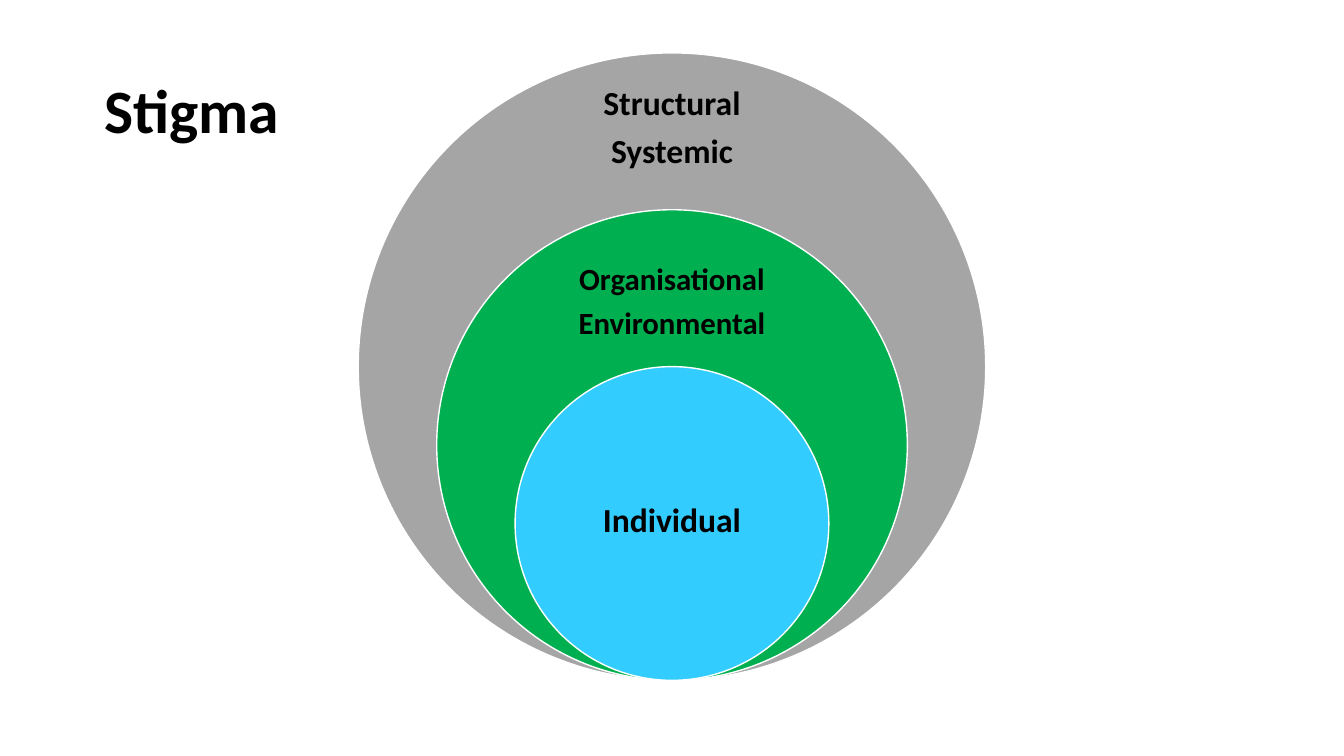
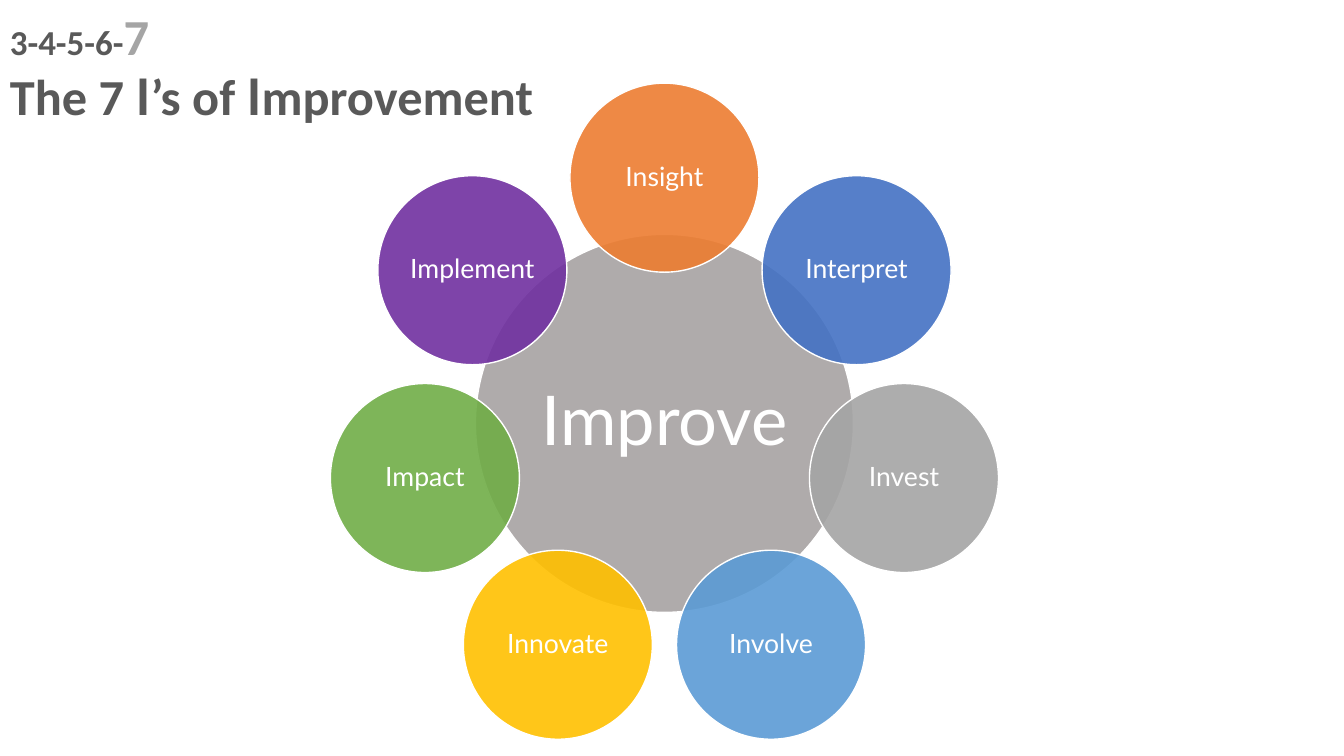
import math

import pptx
import pptx.dml.color
import pptx.enum.shapes
import pptx.enum.text
import pptx.oxml.ns
import pptx.util
from lxml import etree

BLACK, WHITE, DARK_GREY, GREY = "000000", "FFFFFF", "595959", "A5A5A5"
MIDDLE = pptx.enum.text.MSO_ANCHOR.MIDDLE
CENTER = pptx.enum.text.PP_ALIGN.CENTER

presentation = pptx.Presentation()
presentation.slide_width = pptx.util.Inches(13.333)
presentation.slide_height = pptx.util.Inches(7.5)
width, height = presentation.slide_width, presentation.slide_height
blank_layout = presentation.slide_layouts[6]


def add_run(paragraph, text, size, font, color, bold=False):
    run = paragraph.add_run()
    run.text = text
    run.font.size = pptx.util.Pt(size)
    run.font.name = font
    run.font.bold = bold
    run.font.color.rgb = pptx.dml.color.RGBColor.from_string(color)


def add_circle(slide, center_x, center_y, diameter, fill, opacity=100):
    """Add a white-edged circle and return its text frame, without margins."""
    circle = slide.shapes.add_shape(
        pptx.enum.shapes.MSO_SHAPE.OVAL,
        round(center_x - diameter / 2), round(center_y - diameter / 2),
        round(diameter), round(diameter))
    circle.shadow.inherit = False
    circle.fill.solid()
    circle.fill.fore_color.rgb = pptx.dml.color.RGBColor.from_string(fill)
    circle.line.color.rgb = pptx.dml.color.RGBColor.from_string(WHITE)
    circle.line.width = pptx.util.Pt(1)
    if opacity < 100:
        color = circle.fill._xPr.find(".//" + pptx.oxml.ns.qn("a:srgbClr"))
        alpha = etree.SubElement(color, pptx.oxml.ns.qn("a:alpha"))
        alpha.set("val", str(opacity * 1000))
    frame = circle.text_frame
    frame.margin_left = frame.margin_right = 0
    frame.margin_top = frame.margin_bottom = 0
    frame.vertical_anchor = MIDDLE
    frame.paragraphs[0].alignment = CENTER
    frame.paragraphs[0].line_spacing = 0.9
    return frame


# Slide 1: nested circles resting on a common bottom
slide = presentation.slides.add_slide(blank_layout)
title = slide.shapes.add_textbox(
    round(width * 0.07), round(height * 0.05), round(width * 0.86), round(height * 0.2))
title.text_frame.word_wrap = True
title.text_frame.vertical_anchor = MIDDLE
title.text_frame.paragraphs[0].line_spacing = 0.9
add_run(title.text_frame.paragraphs[0], "Stigma", 44, "Calibri", BLACK, True)

outer_diameter, bottom = height * 0.83, height * 0.9
label_width, label_height = width * 0.18, height * 0.12
levels = [
    (1, GREY, 0.17, 24, ["Structural", "Systemic"]),
    (0.75, "00B050", 0.4, 22, ["Organisational", "Environmental"]),
    (0.5, "33CCFF", 0.69, 24, ["Individual"]),
]
for scale, fill, label_center, size, lines in levels:
    diameter = outer_diameter * scale
    add_circle(slide, width / 2, bottom - diameter / 2, diameter, fill)
    label = slide.shapes.add_textbox(
        round((width - label_width) / 2), round(height * label_center - label_height / 2),
        round(label_width), round(label_height))
    frame = label.text_frame
    frame.word_wrap = True
    frame.vertical_anchor = MIDDLE
    for index, line in enumerate(lines):
        paragraph = frame.add_paragraph() if index else frame.paragraphs[0]
        paragraph.alignment = CENTER
        paragraph.line_spacing = 0.9
        paragraph.space_after = pptx.util.Pt(size * 0.35)
        add_run(paragraph, line, size, "Calibri", BLACK, True)

# Slide 2: seven circles spaced evenly around a core
slide = presentation.slides.add_slide(blank_layout)
core_x, core_y = width / 2 - height * 0.01, height * 0.56
core_diameter = height * 0.5
ring_radius = core_diameter / 2 * 1.3

frame = add_circle(slide, core_x, core_y, core_diameter, "AFABAB")
add_run(frame.paragraphs[0], "Improve", 49, "Lato", WHITE)

steps = [
    ("Insight", "ED7D31"),
    ("Interpret", "4472C4"),
    ("Invest", GREY),
    ("Involve", "5B9BD5"),
    ("Innovate", "FFC000"),
    ("Impact", "70AD47"),
    ("Implement", "7030A0"),
]
for index, (name, fill) in enumerate(steps):
    angle = math.tau * index / len(steps)
    frame = add_circle(
        slide, core_x + ring_radius * math.sin(angle), core_y - ring_radius * math.cos(angle),
        core_diameter / 2, fill, opacity=90)
    add_run(frame.paragraphs[0], name, 19, "Lato", WHITE)

heading = slide.shapes.add_textbox(0, 0, round(width * 0.42), round(height * 0.17))
heading.text_frame.word_wrap = True
counter = heading.text_frame.paragraphs[0]
add_run(counter, "3-4-5-6-", 25, "Calibri", DARK_GREY, True)
add_run(counter, "7", 36, "Calibri", GREY, True)
headline = heading.text_frame.add_paragraph()
for text, font in [("The 7 ", "Calibri"), ("I", "Lato"), ("’s of ", "Calibri"),
                   ("I", "Lato"), ("mprovement", "Calibri")]:
    add_run(headline, text, 36, font, DARK_GREY, True)

presentation.save("out.pptx")
